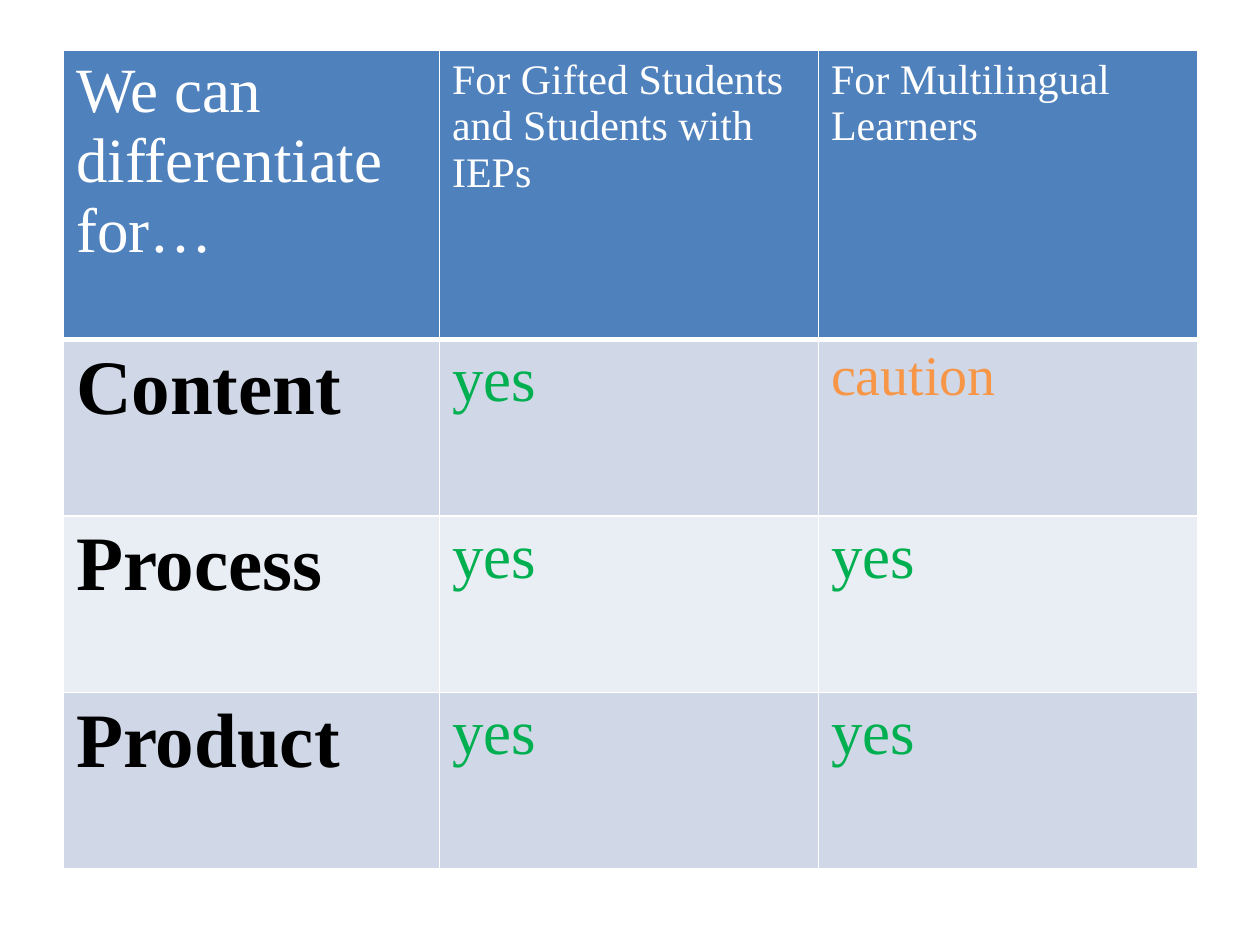
from lxml.etree import SubElement
from pptx import Presentation
from pptx.dml.color import RGBColor
from pptx.oxml.ns import qn
from pptx.util import Cm, Pt

COLORS = {
    "white": "FFFFFF",
    "black": "000000",
    "header": "4F81BD",
    "dark band": "D0D8E8",
    "light band": "E9EDF4",
    "yes": "00B050",
    "caution": "F79646",
}
ANSWER_SIZES = {"yes": 36, "caution": 32}

HEADINGS = [
    ("We can differentiate for…", 36),
    ("For Gifted Students and Students with IEPs", 24),
    ("For Multilingual Learners", 24),
]
ANSWERS = [
    ("Content", "yes", "caution"),
    ("Process", "yes", "yes"),
    ("Product", "yes", "yes"),
]
COLUMN_WIDTHS = [7.58, 7.64, 7.64]
ROW_HEIGHTS = [5.82, 3.56, 3.56, 3.56]


class SlideBuilder:
    """Holds the text style and the page being filled."""

    font_name = "Times New Roman"

    def __init__(self, deck):
        self.page = deck.slides.add_slide(deck.slide_layouts[6])

    def table(self, left, top, widths, heights):
        frame = self.page.shapes.add_table(
            len(heights), len(widths), Cm(left), Cm(top),
            Cm(sum(widths)), Cm(sum(heights)))
        table = frame.table
        for column, width in zip(table.columns, widths):
            column.width = Cm(width)
        for row, height in zip(table.rows, heights):
            row.height = Cm(height)
        return table

    def cell(self, cell, text, size, color, fill, bold=False):
        cell.text = text
        font = cell.text_frame.paragraphs[0].font
        font.name = self.font_name
        font.size = Pt(size)
        font.bold = bold
        font.color.rgb = RGBColor.from_string(COLORS[color])
        cell.fill.solid()
        cell.fill.fore_color.rgb = RGBColor.from_string(COLORS[fill])

    def borders(self, cell, color, **widths):
        """Draw the sides given as L, R, T and B, in that order, in points."""
        properties = cell._tc.get_or_add_tcPr()
        for position, (side, width) in enumerate(widths.items()):
            line = SubElement(properties, qn(f"a:ln{side}"), w=str(Pt(width)))
            fill = SubElement(line, qn("a:solidFill"))
            SubElement(fill, qn("a:srgbClr"), val=COLORS[color])
            properties.insert(position, line)


def main():
    deck = Presentation()
    deck.slide_width, deck.slide_height = Cm(25.4), Cm(19.05)
    builder = SlideBuilder(deck)
    table = builder.table(1.28, 1.02, COLUMN_WIDTHS, ROW_HEIGHTS)

    for column, (heading, size) in enumerate(HEADINGS):
        cell = table.cell(0, column)
        builder.cell(cell, heading, size, "white", "header")
        builder.borders(cell, "white", L=1, R=1, T=1, B=3)

    for row, (topic, *answers) in enumerate(ANSWERS, start=1):
        band = "dark band" if row % 2 else "light band"
        builder.cell(table.cell(row, 0), topic, 44, "black", band, bold=True)
        for column, answer in enumerate(answers, start=1):
            builder.cell(table.cell(row, column), answer,
                         ANSWER_SIZES[answer], answer, band)

    deck.save("out.pptx")


if __name__ == "__main__":
    main()
